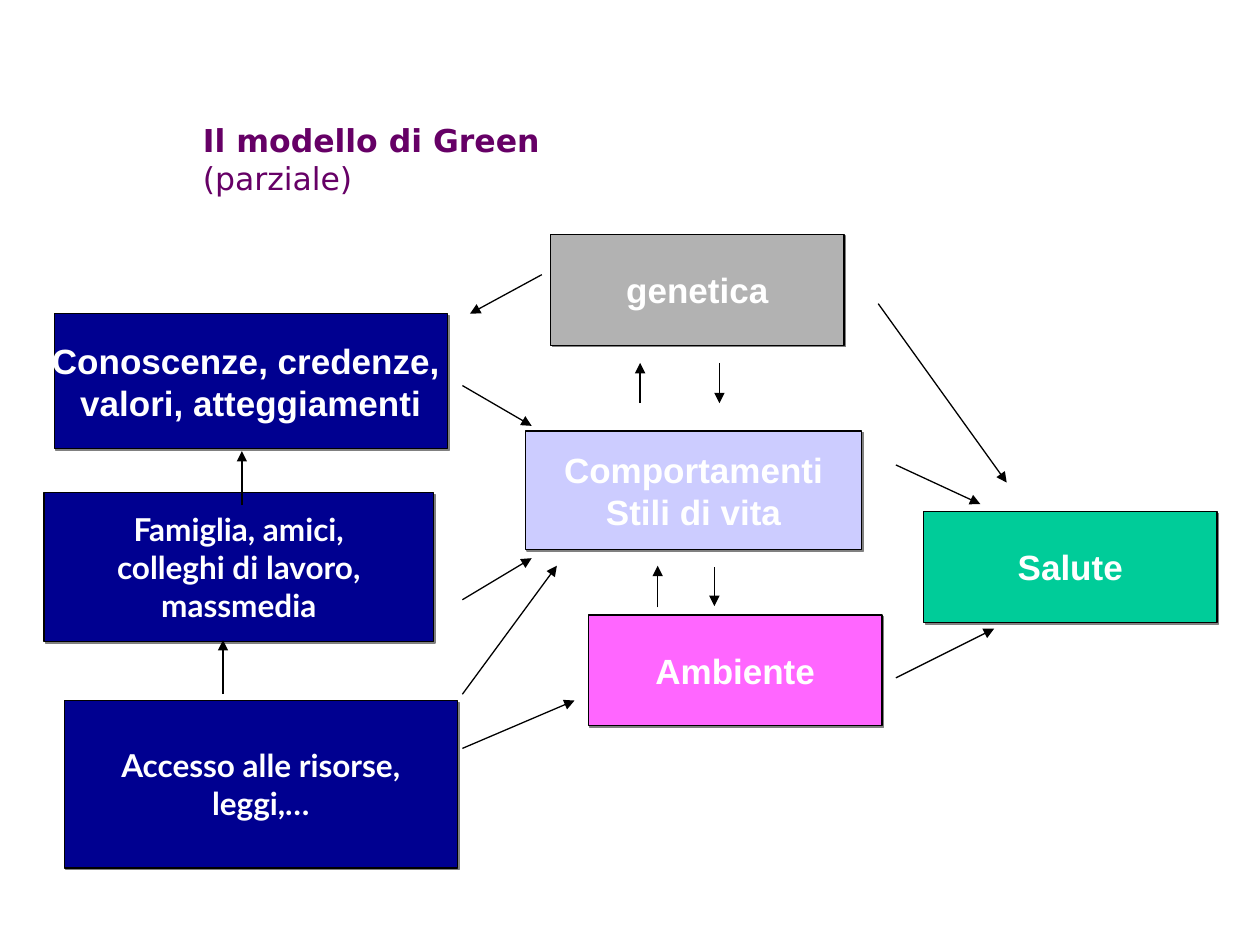
from pptx import Presentation
from pptx.dml.color import RGBColor
from pptx.enum.shapes import MSO_CONNECTOR, MSO_SHAPE
from pptx.enum.text import MSO_ANCHOR, MSO_AUTO_SIZE, PP_ALIGN
from pptx.oxml import parse_xml
from pptx.oxml.ns import nsdecls, qn
from pptx.util import Inches, Pt

RECTANGLE = MSO_SHAPE.RECTANGLE
STRAIGHT = MSO_CONNECTOR.STRAIGHT
MIDDLE, BOTTOM = MSO_ANCHOR.MIDDLE, MSO_ANCHOR.BOTTOM
LEFT, CENTER = PP_ALIGN.LEFT, PP_ALIGN.CENTER
NO_FIT = MSO_AUTO_SIZE.NONE
TITLE_ONLY = 5

COLORS = {
    "title": "660066",
    "text": "FFFFFF",
    "line": "000000",
    "shadow": "808080",
    "social": "000090",
    "behaviour": "CCCCFF",
    "environment": "FF66FF",
    "health": "00CC99",
    "genetics": "B2B2B2",
}

BOXES = [
    ((0.43, 2.49, 3.12, 1.07), "social", "Arial", 20,
     ["Conoscenze, credenze, ", "valori, atteggiamenti"]),
    ((4.17, 3.42, 2.67, 0.94), "behaviour", "Arial", 20,
     ["Comportamenti", "Stili di vita"]),
    ((0.35, 3.91, 3.09, 1.18), "social", "Lato", 18,
     ["Famiglia, amici,", "colleghi di lavoro,", "massmedia"]),
    ((0.51, 5.56, 3.12, 1.33), "social", "Lato", 18,
     ["Accesso alle risorse,", "leggi,…"]),
    ((4.67, 4.88, 2.33, 0.88), "environment", "Arial", 20, ["Ambiente"]),
    ((7.33, 4.06, 2.33, 0.88), "health", "Arial", 20, ["Salute"]),
    ((4.37, 1.86, 2.33, 0.88), "genetics", "Arial", 20, ["genetica"]),
]

ARROWS = [
    (3.67, 3.06, 4.22, 3.38),
    (3.67, 4.76, 4.22, 4.43),
    (3.67, 5.94, 4.56, 5.56),
    (3.67, 5.51, 4.42, 4.49),
    (7.11, 5.38, 7.89, 4.99),
    (7.11, 3.69, 7.78, 4.0),
    (5.67, 4.5, 5.67, 4.81),
    (5.22, 4.82, 5.22, 4.49),
    (1.92, 4.01, 1.92, 3.58),
    (1.77, 5.51, 1.77, 5.08),
    (5.08, 3.2, 5.08, 2.88),
    (5.71, 2.88, 5.71, 3.2),
    (4.3, 2.18, 3.73, 2.49),
    (6.97, 2.41, 7.99, 3.83),
]


def color(name):
    """Return the named colour."""
    return RGBColor.from_string(COLORS[name])


def add_span(para, text, font, size, tint, bold):
    """Add one formatted run to a paragraph."""
    span = para.add_run()
    span.text = text
    span.font.name = font
    span.font.size = Pt(size)
    span.font.bold = bold
    span.font.color.rgb = color(tint)


def set_title(page):
    """Place the title and its lighter second line."""
    title = page.shapes.title
    title.left, title.top = Inches(1.51), Inches(0.31)
    title.width, title.height = Inches(8.49), Inches(1.3)
    frame = title.text_frame
    frame.auto_size = NO_FIT
    frame.vertical_anchor = BOTTOM
    para = frame.paragraphs[0]
    para.alignment = LEFT
    add_span(para, "Il modello di Green ", "DejaVu Sans", 18, "title", True)
    para.add_line_break()
    add_span(para, "(parziale)", "DejaVu Sans", 18, "title", False)


def add_shadow(box):
    """Give a box a small hard shadow to the lower right."""
    box.shadow.inherit = False
    effects = box.element.spPr.find(qn("a:effectLst"))
    effects.append(parse_xml(
        f'<a:outerShdw {nsdecls("a")} dist="{Pt(1.4)}" dir="2700000" algn="ctr" '
        f'rotWithShape="0"><a:srgbClr val="{COLORS["shadow"]}"/></a:outerShdw>'
    ))


def add_box(page, place, fill, font, size, lines):
    """Add a filled rectangle with centred bold lines."""
    box = page.shapes.add_shape(RECTANGLE, *map(Inches, place))
    box.fill.solid()
    box.fill.fore_color.rgb = color(fill)
    box.line.color.rgb = color("line")
    box.line.width = Pt(0.75)
    add_shadow(box)
    frame = box.text_frame
    frame.word_wrap = False
    frame.vertical_anchor = MIDDLE
    for index, line in enumerate(lines):
        para = frame.add_paragraph() if index else frame.paragraphs[0]
        para.alignment = CENTER
        add_span(para, line, font, size, "text", True)


def add_arrow(page, points):
    """Add a thin straight arrow."""
    arrow = page.shapes.add_connector(STRAIGHT, *map(Inches, points))
    arrow.line.color.rgb = color("line")
    arrow.line.width = Pt(0.75)
    properties = arrow.element.spPr
    properties.find(qn("a:ln")).append(
        parse_xml(f'<a:tailEnd {nsdecls("a")} type="triangle"/>'))
    properties.append(parse_xml(f'<a:effectLst {nsdecls("a")}/>'))


def main():
    """Build the model diagram and save the deck."""
    deck = Presentation()
    deck.slide_width, deck.slide_height = Inches(10), Inches(7.5)
    page = deck.slides.add_slide(deck.slide_layouts[TITLE_ONLY])
    set_title(page)
    for box in BOXES:
        add_box(page, *box)
    for points in ARROWS:
        add_arrow(page, points)
    deck.save("out.pptx")


if __name__ == "__main__":
    main()
